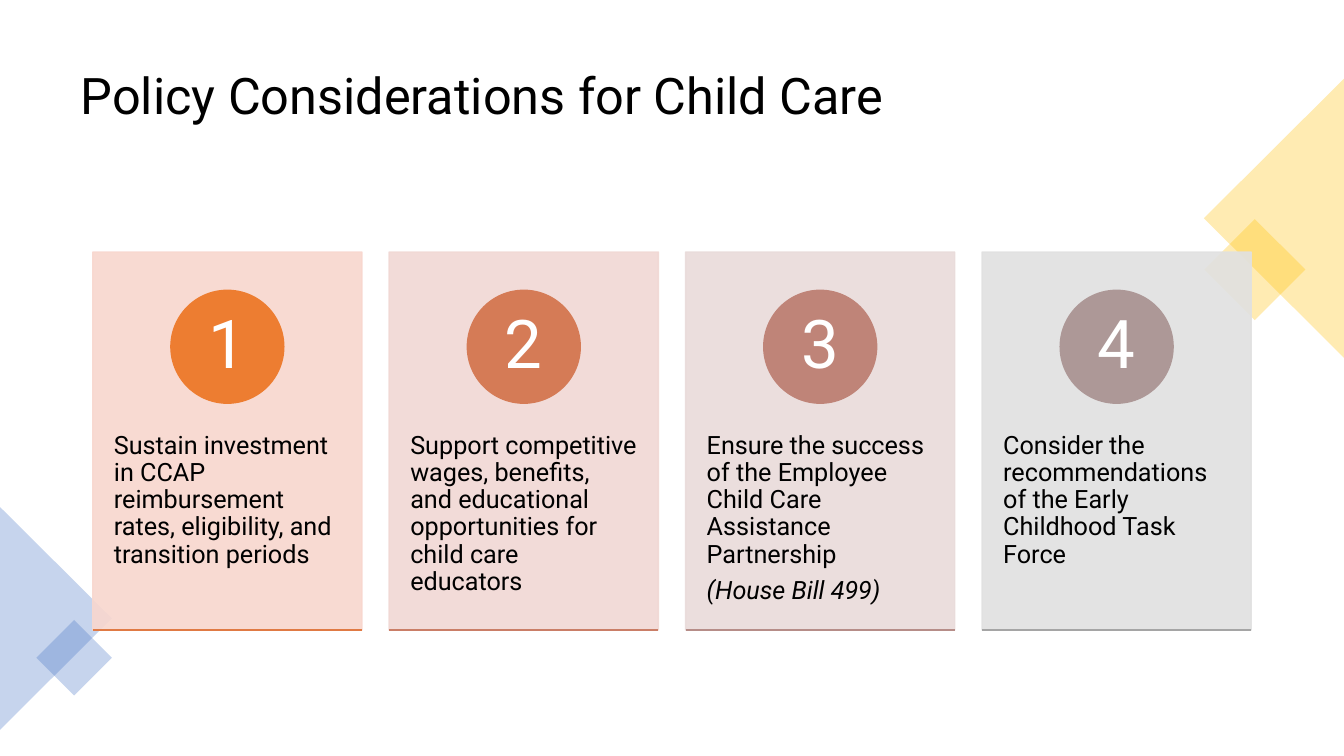
from dataclasses import dataclass

from lxml import etree
from pptx import Presentation
from pptx.dml.color import RGBColor
from pptx.enum.shapes import MSO_CONNECTOR, MSO_SHAPE
from pptx.enum.text import MSO_ANCHOR, MSO_AUTO_SIZE, PP_ALIGN
from pptx.oxml.ns import qn
from pptx.util import Inches, Pt

RECTANGLE = MSO_SHAPE.RECTANGLE
TRIANGLE = MSO_SHAPE.ISOSCELES_TRIANGLE
OVAL = MSO_SHAPE.OVAL
STRAIGHT = MSO_CONNECTOR.STRAIGHT
TOP, MIDDLE = MSO_ANCHOR.TOP, MSO_ANCHOR.MIDDLE
LEFT, CENTER = PP_ALIGN.LEFT, PP_ALIGN.CENTER
TITLE_ONLY = 5


@dataclass(frozen=True)
class Theme:
    """Fonts, type sizes, colours and opacities of the slide."""
    font: str = "Roboto"
    title_size: int = 36
    number_size: int = 48
    body_size: int = 18
    text: str = "000000"
    number: str = "FFFFFF"
    gold: str = "FFC000"
    blue: str = "4472C4"
    decoration_opacity: int = 30
    card_opacity: int = 90
    card_fills: tuple = ("F8D7CE", "F1D8D4", "E9DBDA", "E1E1E1")
    circle_fills: tuple = ("ED7D31", "D57B56", "BF8478", "AD9897")
    base_lines: tuple = ("E07A44", "CA7E67", "B68D88", "A5A5A5")


THEME = Theme()

DECORATIONS = (
    (RECTANGLE, (12.09, 2.32, 0.71, 0.71), 45, THEME.gold),
    (TRIANGLE, (11.25, 1.47, 2.77, 1.39), 270, THEME.gold),
    (TRIANGLE, (-0.55, 5.58, 2.21, 1.11), 90, THEME.blue),
    (RECTANGLE, (0.47, 6.26, 0.53, 0.53), 45, THEME.blue),
)

CONSIDERATIONS = (
    ("Sustain investment in CCAP reimbursement rates, eligibility, and transition periods",),
    ("Support competitive wages, benefits, and educational opportunities for child care educators",),
    ("Ensure the success of the Employee Child Care Assistance Partnership", "(House Bill 499)"),
    ("Consider the recommendations of the Early Childhood Task Force",),
)


def place(shape, box):
    """Move and size a shape to a box given in inches."""
    shape.left, shape.top, shape.width, shape.height = map(Inches, box)


def write(frame, *texts, size, color=THEME.text, align=LEFT, anchor=TOP,
          insets=(0.1, 0.05), space_after=0, italic_from=None):
    """Fill a text frame with one formatted paragraph for each text."""
    frame.word_wrap = True
    frame.auto_size = MSO_AUTO_SIZE.NONE
    frame.vertical_anchor = anchor
    frame.margin_left = frame.margin_right = Inches(insets[0])
    frame.margin_top = frame.margin_bottom = Inches(insets[1])
    for index, text in enumerate(texts):
        paragraph = frame.add_paragraph() if index else frame.paragraphs[0]
        paragraph.alignment = align
        paragraph.line_spacing = 0.9
        paragraph.space_before = Pt(0)
        paragraph.space_after = Pt(space_after)
        run = paragraph.add_run()
        run.text = text
        run.font.name = THEME.font
        run.font.size = Pt(size)
        run.font.color.rgb = RGBColor.from_string(color)
        run.font.italic = italic_from is not None and index >= italic_from


def add_filled(slide, kind, box, color, opacity=100, outlined=True):
    """Add a shape in one colour, with an optional outline and opacity."""
    shape = slide.shapes.add_shape(kind, *map(Inches, box))
    shape.shadow.inherit = False
    shape.fill.solid()
    shape.fill.fore_color.rgb = RGBColor.from_string(color)
    if outlined:
        shape.line.color.rgb = RGBColor.from_string(color)
        shape.line.width = Pt(1)
    else:
        shape.line.fill.background()
    if opacity < 100:
        for element in shape.element.spPr.iter(qn("a:srgbClr")):
            etree.SubElement(element, qn("a:alpha")).set("val", str(opacity * 1000))
    return shape


def add_title(slide, box):
    """Place and write the slide title."""
    title = slide.shapes.title
    place(title, box)
    write(title.text_frame, "Policy Considerations for Child Care",
          size=THEME.title_size, anchor=MIDDLE)


def add_decorations(slide):
    """Add the translucent corner shapes."""
    for kind, box, rotation, color in DECORATIONS:
        shape = add_filled(slide, kind, box, color, THEME.decoration_opacity, outlined=False)
        shape.rotation = rotation


def add_card(slide, box, index):
    """Add one numbered consideration with its circle and base line."""
    left, top, width, height = box
    add_filled(slide, RECTANGLE, box, THEME.card_fills[index], THEME.card_opacity)

    caption = slide.shapes.add_textbox(
        *map(Inches, (left, top + 1.43, width, 2.25)))
    write(caption.text_frame, *CONSIDERATIONS[index], size=THEME.body_size,
          insets=(0.21, 0.36), space_after=6.3, italic_from=1)

    diameter = 1.12
    circle_box = (left + (width - diameter) / 2, top + 0.38, diameter, diameter)
    circle = add_filled(slide, OVAL, circle_box, THEME.circle_fills[index])
    write(circle.text_frame, str(index + 1), size=THEME.number_size, color=THEME.number,
          align=CENTER, anchor=MIDDLE, insets=(0.09, 0.01))

    bottom = top + height
    base = slide.shapes.add_connector(
        STRAIGHT, *map(Inches, (left, bottom, left + width, bottom)))
    base.line.color.rgb = RGBColor.from_string(THEME.base_lines[index])
    base.line.width = Pt(1)
    etree.SubElement(base.element.spPr, qn("a:effectLst"))


def add_cards(slide, box, gap=0.27):
    """Divide a box into equal cards in a row."""
    left, top, width, height = box
    count = len(CONSIDERATIONS)
    card_width = (width - gap * (count - 1)) / count
    for index in range(count):
        card_left = left + index * (card_width + gap)
        add_card(slide, (card_left, top, card_width, height), index)


def main():
    """Build and save the slide."""
    presentation = Presentation()
    presentation.slide_width = Inches(13.33)
    presentation.slide_height = Inches(7.5)
    slide = presentation.slides.add_slide(presentation.slide_layouts[TITLE_ONLY])
    add_title(slide, (0.7, 0.35, 11.93, 1.24))
    add_decorations(slide)
    add_cards(slide, (0.92, 2.5, 11.49, 3.75))
    presentation.save("out.pptx")


if __name__ == "__main__":
    main()
